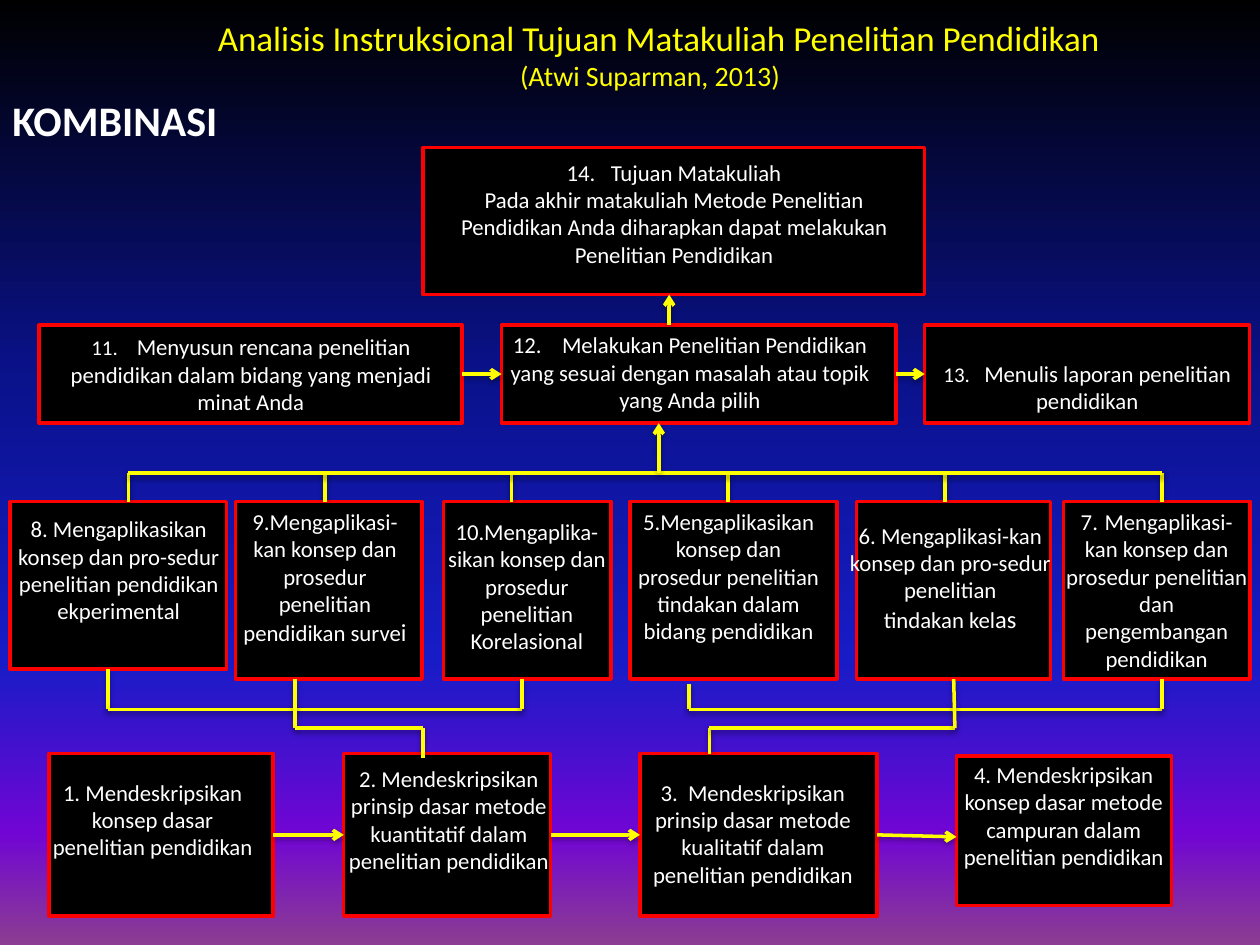
import pptx
import pptx.dml.color
import pptx.enum.shapes
import pptx.enum.text
import pptx.oxml
import pptx.oxml.ns
import pptx.util
from pptx.util import Cm

BLACK = pptx.dml.color.RGBColor(0x00, 0x00, 0x00)
WHITE = pptx.dml.color.RGBColor(0xFF, 0xFF, 0xFF)
RED = pptx.dml.color.RGBColor(0xFF, 0x00, 0x00)
YELLOW = pptx.dml.color.RGBColor(0xFF, 0xFF, 0x00)
BACKGROUND_STOPS = [
    (0, BLACK),
    (40, pptx.dml.color.RGBColor(0x0A, 0x12, 0x8C)),
    (70, pptx.dml.color.RGBColor(0x18, 0x1C, 0xC7)),
    (88, pptx.dml.color.RGBColor(0x70, 0x05, 0xD4)),
    (100, pptx.dml.color.RGBColor(0x8C, 0x3D, 0x91)),
]
NAMESPACE = pptx.oxml.ns.nsdecls("a")
CENTER = pptx.enum.text.PP_ALIGN.CENTER
LEFT = pptx.enum.text.PP_ALIGN.LEFT
MIDDLE = pptx.enum.text.MSO_ANCHOR.MIDDLE
TOP = pptx.enum.text.MSO_ANCHOR.TOP
GROW = pptx.enum.text.MSO_AUTO_SIZE.SHAPE_TO_FIT_TEXT

BODY_FORMAT = {"name": "Calibri", "bold": False, "size": pptx.util.Pt(13)}
TITLE_FORMAT = BODY_FORMAT | {"size": pptx.util.Pt(20)}
HEADING_FORMAT = BODY_FORMAT | {"bold": True, "size": pptx.util.Pt(24)}

# pptx-free layout data: box frame, then text frame and paragraphs
STEPS = {
    1: ((0.99, 15.19, 4.52, 3.28), (0.79, 15.57, 4.57, 2.49),
        ["1. Mendeskripsikan konsep dasar penelitian pendidikan"]),
    2: ((6.93, 15.19, 4.17, 3.28), (6.76, 15.29, 4.57, 3.02),
        ["2. Mendeskripsikan prinsip dasar metode kuantitatif dalam penelitian pendidikan"]),
    3: ((12.9, 15.19, 4.78, 3.28), (12.7, 15.57, 4.95, 2.49),
        [["3.", (" ", 13, 2.9),
          "Mendeskripsikan prinsip dasar metode kualitatif dalam penelitian pendidikan"]]),
    4: ((19.28, 15.24, 4.34, 3.02), (19.05, 15.21, 4.78, 3.02),
        ["4. Mendeskripsikan konsep dasar metode campuran dalam penelitian pendidikan"]),
    5: ((12.7, 10.11, 4.17, 3.58), (12.5, 10.11, 4.37, 3.58),
        ["5.Mengaplikasikan konsep dan prosedur penelitian tindakan dalam bidang pendidikan"]),
    6: ((17.27, 10.11, 3.91, 3.58), (16.87, 10.39, 4.57, 3.07),
        ["6. Mengaplikasi-kan konsep dan pro-sedur penelitian",
         ["tindakan kel", ("as", 14, 0)]]),
    7: ((21.44, 10.11, 3.76, 3.58), (21.23, 10.11, 4.17, 3.58),
        ["Mengaplikasi-", "kan konsep dan prosedur penelitian dan pengembangan pendidikan"]),
    8: ((0.2, 10.11, 4.37, 3.38), (0, 10.26, 4.78, 3.02),
        ["8. Mengaplikasikan konsep dan pro-sedur penelitian pendidikan ekperimental"]),
    9: ((4.75, 10.11, 3.76, 3.58), (4.57, 10.11, 3.96, 3.63),
        ["9.Mengaplikasi-",
         ["kan konsep dan prosedur penelitian pendidikan surve", ("i", 14, 0)]]),
    10: ((8.94, 10.11, 3.38, 3.58), (8.74, 10.31, 3.76, 3.02),
         ["10.Mengaplika-sikan konsep dan prosedur penelitian Korelasional"]),
    11: ((0.79, 6.55, 8.53, 1.98), None,
         [[("11.", 12, 0), (" ", 12, 8.1),
           "Menyusun rencana penelitian pendidikan dalam bidang yang menjadi minat Anda"]]),
    12: ((10.11, 6.55, 7.95, 1.98), (9.93, 6.55, 7.95, 1.93),
         [["12.", (" ", 13, 8.8), "Melakukan Penelitian Pendidikan yang sesuai "
           "dengan masalah atau topik yang Anda pilih"]]),
    13: ((18.64, 6.55, 6.55, 1.98), None,
         [[("13.", 12, 0), (" ", 12, 5.4), "Menulis laporan penelitian pendidikan"]]),
    14: ((8.53, 2.97, 10.11, 2.97), (8.53, 3.07, 10.11, 2.49),
         [["14.", (" ", 13, 5.9), "Tujuan Matakuliah"],
          "Pada akhir matakuliah Metode Penelitian Pendidikan Anda "
          "diharapkan dapat melakukan Penelitian Pendidikan"]),
}

BUS_TOP = 9.53
ROW_TOP = 10.11
ROW_BOTTOM = 13.69
BRACKET = 14.3
LINK = 14.68
BRANCHES = [2.59, 6.55, 10.31, 14.68, 19.05, 23.42]
PATHS = [
    [(BRANCHES[0], BUS_TOP), (BRANCHES[-1], BUS_TOP)],
    [(2.18, 13.49), (2.18, BRACKET), (10.52, BRACKET), (10.52, ROW_BOTTOM)],
    [(13.89, 13.79), (13.89, BRACKET), (23.42, BRACKET), (23.42, ROW_BOTTOM)],
    [(5.95, ROW_BOTTOM), (5.95, LINK), (8.53, LINK), (8.53, 15.29)],
    [(14.3, 15.19), (14.3, LINK), (19.25, LINK)],
]


def paint_background(slide):
    fill = slide.background.fill
    fill.gradient()
    fill.gradient_angle = 270
    stops = slide.background._cSld.find(".//" + pptx.oxml.ns.qn("a:gsLst"))
    for stop in list(stops):
        stops.remove(stop)
    for position, color in BACKGROUND_STOPS:
        stops.append(pptx.oxml.parse_xml(
            f'<a:gs {NAMESPACE} pos="{position * 1000}"><a:srgbClr val="{color}"/></a:gs>'))


def add_run(paragraph, text, formats, color, spacing=0):
    run = paragraph.add_run()
    run.text = text
    for name, value in formats.items():
        setattr(run.font, name, value)
    run.font.color.rgb = color
    if spacing:
        run.font._element.set("spc", str(round(spacing * 100)))


def write_paragraphs(frame, paragraphs, formats=BODY_FORMAT, color=WHITE, alignment=CENTER):
    for index, content in enumerate(paragraphs):
        paragraph = frame.add_paragraph() if index else frame.paragraphs[0]
        paragraph.alignment = alignment
        for item in [content] if isinstance(content, str) else content:
            text, size, spacing = (item, None, 0) if isinstance(item, str) else item
            changes = {"size": pptx.util.Pt(size)} if size else {}
            add_run(paragraph, text, formats | changes, color, spacing)


def indent_paragraph(paragraph, left, first=0):
    properties = paragraph._p.get_or_add_pPr()
    properties.set("marL", str(Cm(left)))
    properties.set("indent", str(Cm(first)))
    return properties


def add_text(slide, frame, paragraphs, **options):
    shape = slide.shapes.add_textbox(*map(Cm, frame))
    formats = {"word_wrap": True, "auto_size": GROW, "vertical_anchor": TOP}
    for name, value in formats.items():
        setattr(shape.text_frame, name, value)
    write_paragraphs(shape.text_frame, paragraphs, **options)
    return shape


def add_box(slide, frame):
    shape = slide.shapes.add_shape(pptx.enum.shapes.MSO_SHAPE.RECTANGLE, *map(Cm, frame))
    shape.shadow.inherit = False
    shape.fill.solid()
    shape.fill.fore_color.rgb = BLACK
    shape.line.color.rgb = RED
    shape.line.width = pptx.util.Pt(2)
    return shape


def add_step(slide, box_frame, text_frame, paragraphs):
    box = add_box(slide, box_frame)
    if text_frame:
        return box, add_text(slide, text_frame, paragraphs)
    box.text_frame.word_wrap = True
    box.text_frame.vertical_anchor = MIDDLE
    write_paragraphs(box.text_frame, paragraphs)
    return box, box


def add_line(slide, start, end, arrow=False):
    connector = slide.shapes.add_connector(
        pptx.enum.shapes.MSO_CONNECTOR.STRAIGHT, *map(Cm, start + end))
    connector.line.color.rgb = YELLOW
    connector.line.width = pptx.util.Pt(2)
    if arrow:
        connector.line._get_or_add_ln().append(
            pptx.oxml.parse_xml(f'<a:tailEnd {NAMESPACE} type="arrow"/>'))
    connector._element.spPr.append(pptx.oxml.parse_xml(
        f'<a:effectLst {NAMESPACE}><a:outerShdw blurRad="40000" dist="20000" dir="5400000" '
        'rotWithShape="0"><a:srgbClr val="000000"><a:alpha val="38000"/></a:srgbClr>'
        '</a:outerShdw></a:effectLst>'))
    return connector


def add_lines(slide, boxes):
    for x in BRANCHES:
        add_line(slide, (x, BUS_TOP), (x, ROW_TOP))
    for points in PATHS:
        for start, end in zip(points, points[1:]):
            add_line(slide, start, end)
    add_line(slide, (19.25, LINK), (19.25, ROW_BOTTOM)).end_connect(boxes[6], 2)
    add_line(slide, (13.28, BUS_TOP), (13.28, 8.53), arrow=True)
    add_line(slide, (13.49, 6.55), (13.49, 5.94), arrow=True)
    for first, second in [(1, 2), (2, 3), (11, 12), (12, 13)]:
        arrow = add_line(slide, (0, 0), (1, 1), arrow=True)
        arrow.begin_connect(boxes[first], 3)
        arrow.end_connect(boxes[second], 1)
    add_line(slide, (17.68, 16.83), (19.28, 16.87), arrow=True).begin_connect(boxes[3], 3)


def main():
    presentation = pptx.Presentation()
    presentation.slide_width = Cm(25.4)
    presentation.slide_height = Cm(19.05)
    slide = presentation.slides.add_slide(presentation.slide_layouts[6])
    paint_background(slide)

    title = add_text(
        slide, (1.19, 0.2, 23.83, 1.8),
        ["Analisis Instruksional Tujuan Matakuliah Penelitian Pendidikan",
         [("(Atwi Suparman, 2013)", 16, 0)]],
        formats=TITLE_FORMAT, color=YELLOW)
    indent_paragraph(title.text_frame.paragraphs[0], 0.36)
    add_text(slide, (0, 1.78, 4.95, 1.27), ["KOMBINASI"],
             formats=HEADING_FORMAT, alignment=LEFT)

    boxes, texts = {}, {}
    for number, step in STEPS.items():
        boxes[number], texts[number] = add_step(slide, *step)
    texts[13].text_frame.margin_top = Cm(0.64)
    numbering = indent_paragraph(texts[7].text_frame.paragraphs[0], 0.48, -0.48)
    numbering.append(pptx.oxml.parse_xml(
        f'<a:buAutoNum {NAMESPACE} type="arabicPeriod" startAt="7"/>'))

    add_lines(slide, boxes)
    presentation.save("out.pptx")


if __name__ == "__main__":
    main()
